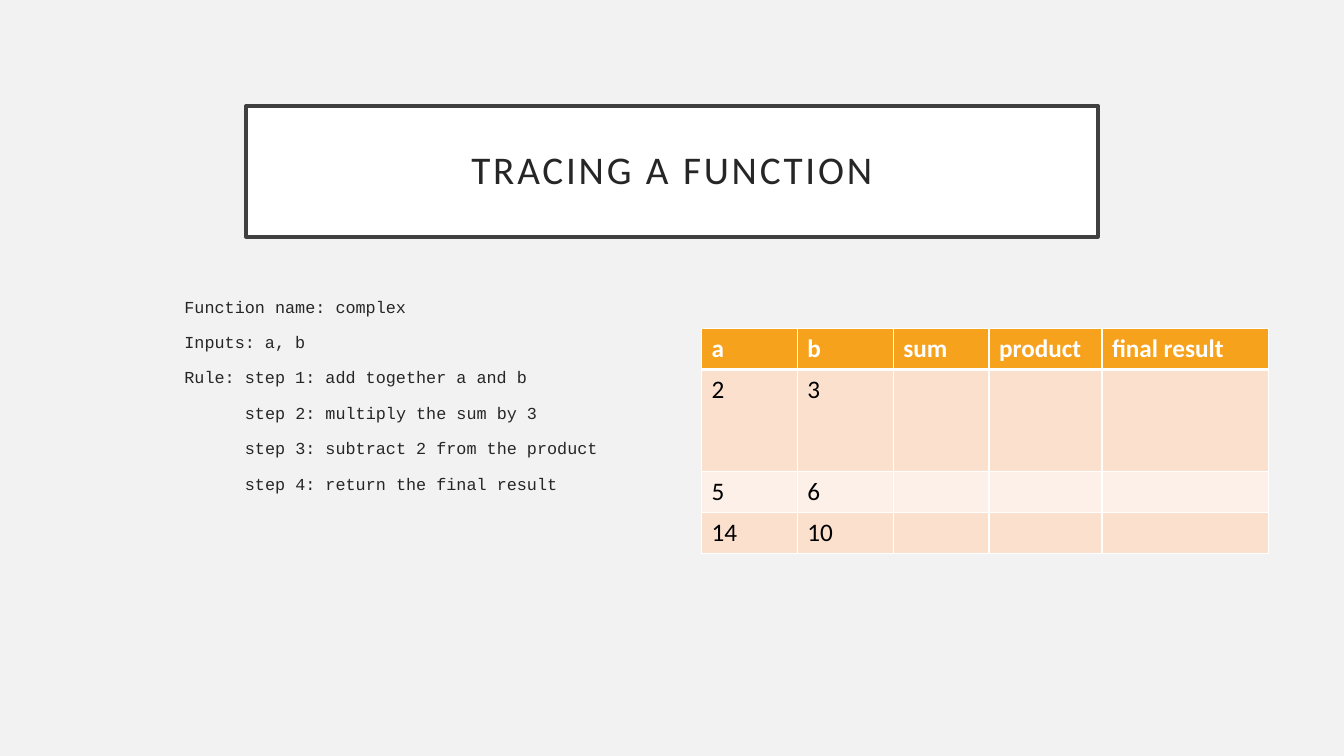
from lxml import etree
from pptx import Presentation
from pptx.dml.color import RGBColor
from pptx.enum.text import MSO_ANCHOR, PP_ALIGN
from pptx.oxml.ns import qn
from pptx.util import Inches, Pt

CENTER = PP_ALIGN.CENTER
MIDDLE = MSO_ANCHOR.MIDDLE

WHITE = RGBColor(0xFF, 0xFF, 0xFF)
BLACK = RGBColor(0x00, 0x00, 0x00)
PAPER = RGBColor(0xF2, 0xF2, 0xF2)
FRAME = RGBColor(0x40, 0x40, 0x40)
INK = RGBColor(0x26, 0x26, 0x26)
ORANGE = RGBColor(0xF6, 0xA2, 0x1D)
BANDS = (RGBColor(0xFB, 0xE0, 0xCD), RGBColor(0xFD, 0xF0, 0xE8))

SLIDE_WIDTH = Inches(13.33)
SLIDE_HEIGHT = Inches(7.5)

# Code lines with their indent in characters
STEP_INDENT = 6
CODE_SIZE = 12
CODE_CHARACTER = 0.6 * CODE_SIZE
CODE_LINES = [
    ("Function name: complex", 0),
    ("Inputs: a, b", 0),
    ("Rule: step 1: add together a and b", 0),
    ("step 2: multiply the sum by 3", STEP_INDENT),
    ("step 3: subtract 2 from the product", STEP_INDENT),
    ("step 4: return the final result", STEP_INDENT),
]

TRACE_ROWS = [
    ["a", "b", "sum", "product", "final result"],
    ["2", "3", "", "", ""],
    ["5", "6", "", "", ""],
    ["14", "10", "", "", ""],
]
# Percent of the slide's width and height
TRACE_COLUMN_WIDTHS = [7.13, 7.13, 7.13, 8.4, 12.4]
TRACE_ROW_HEIGHTS = [5.42, 13.5, 5.42, 5.42]


def across(percent):
    return round(SLIDE_WIDTH * percent / 100)


def down(percent):
    return round(SLIDE_HEIGHT * percent / 100)


def area(left, top, width, height):
    """Turn percentages of the slide into lengths."""
    return across(left), down(top), across(width), down(height)


def set_font(paragraph, name, size, color, bold=False):
    font = paragraph.font
    font.name = name
    font.size = Pt(size)
    font.color.rgb = color
    font.bold = bold


def format_title(title, text):
    title.left, title.top, title.width, title.height = area(18.3, 14, 63.4, 17.33)
    title.fill.solid()
    title.fill.fore_color.rgb = WHITE
    title.line.color.rgb = FRAME
    title.line.width = Pt(2.5)
    frame = title.text_frame
    frame.text = text
    frame.vertical_anchor = MIDDLE
    frame.margin_left = frame.margin_right = Inches(0.2)
    frame.margin_top = frame.margin_bottom = Inches(0.2)
    paragraph = frame.paragraphs[0]
    paragraph.alignment = CENTER
    paragraph.line_spacing = 0.9
    set_font(paragraph, "Calibri", 28, INK)
    for run in paragraph.runs:
        run._r.get_or_add_rPr().set("spc", "200")


def add_code(slide, lines):
    frame = slide.shapes.add_textbox(*area(12.98, 38.4, 33, 45.2)).text_frame
    frame.word_wrap = True
    for number, (text, indent) in enumerate(lines):
        paragraph = frame.add_paragraph() if number else frame.paragraphs[0]
        paragraph.text = text
        paragraph.line_spacing = 1.06
        paragraph.space_before = Pt(10 if number else 0)
        left_margin = Pt(indent * CODE_CHARACTER)
        paragraph._p.get_or_add_pPr().set("marL", str(left_margin))
        set_font(paragraph, "Courier New", CODE_SIZE, INK)


def set_borders(cell, top, bottom):
    """Draw white borders; top and bottom are widths in points."""
    properties = cell._tc.get_or_add_tcPr()
    for side, width in (("L", 1), ("R", 1), ("T", top), ("B", bottom)):
        border = etree.SubElement(properties, qn(f"a:ln{side}"), w=str(Pt(width)))
        fill = etree.SubElement(border, qn("a:solidFill"))
        etree.SubElement(fill, qn("a:srgbClr"), val=str(WHITE))


def add_trace_table(slide, rows):
    place = area(52.2, 43.47, sum(TRACE_COLUMN_WIDTHS), sum(TRACE_ROW_HEIGHTS))
    table = slide.shapes.add_table(len(rows), len(rows[0]), *place).table
    for column, width in zip(table.columns, TRACE_COLUMN_WIDTHS):
        column.width = across(width)
    for row, height in zip(table.rows, TRACE_ROW_HEIGHTS):
        row.height = down(height)
    for row_number, values in enumerate(rows):
        header = row_number == 0
        for column_number, value in enumerate(values):
            cell = table.cell(row_number, column_number)
            # The rule under the header is heavier
            set_borders(cell, 3 if row_number == 1 else 1, 3 if header else 1)
            cell.fill.solid()
            cell.fill.fore_color.rgb = ORANGE if header else BANDS[(row_number - 1) % 2]
            cell.text = value
            set_font(cell.text_frame.paragraphs[0], "Calibri", 18,
                     WHITE if header else BLACK, header)


def main():
    presentation = Presentation()
    presentation.slide_width = SLIDE_WIDTH
    presentation.slide_height = SLIDE_HEIGHT
    title_only = presentation.slide_layouts.get_by_name("Title Only")
    slide = presentation.slides.add_slide(title_only)
    slide.background.fill.solid()
    slide.background.fill.fore_color.rgb = PAPER

    # Title, function description, trace table
    format_title(slide.shapes.title, "TRACING A FUNCTION")
    add_code(slide, CODE_LINES)
    add_trace_table(slide, TRACE_ROWS)

    presentation.save("out.pptx")


if __name__ == "__main__":
    main()
